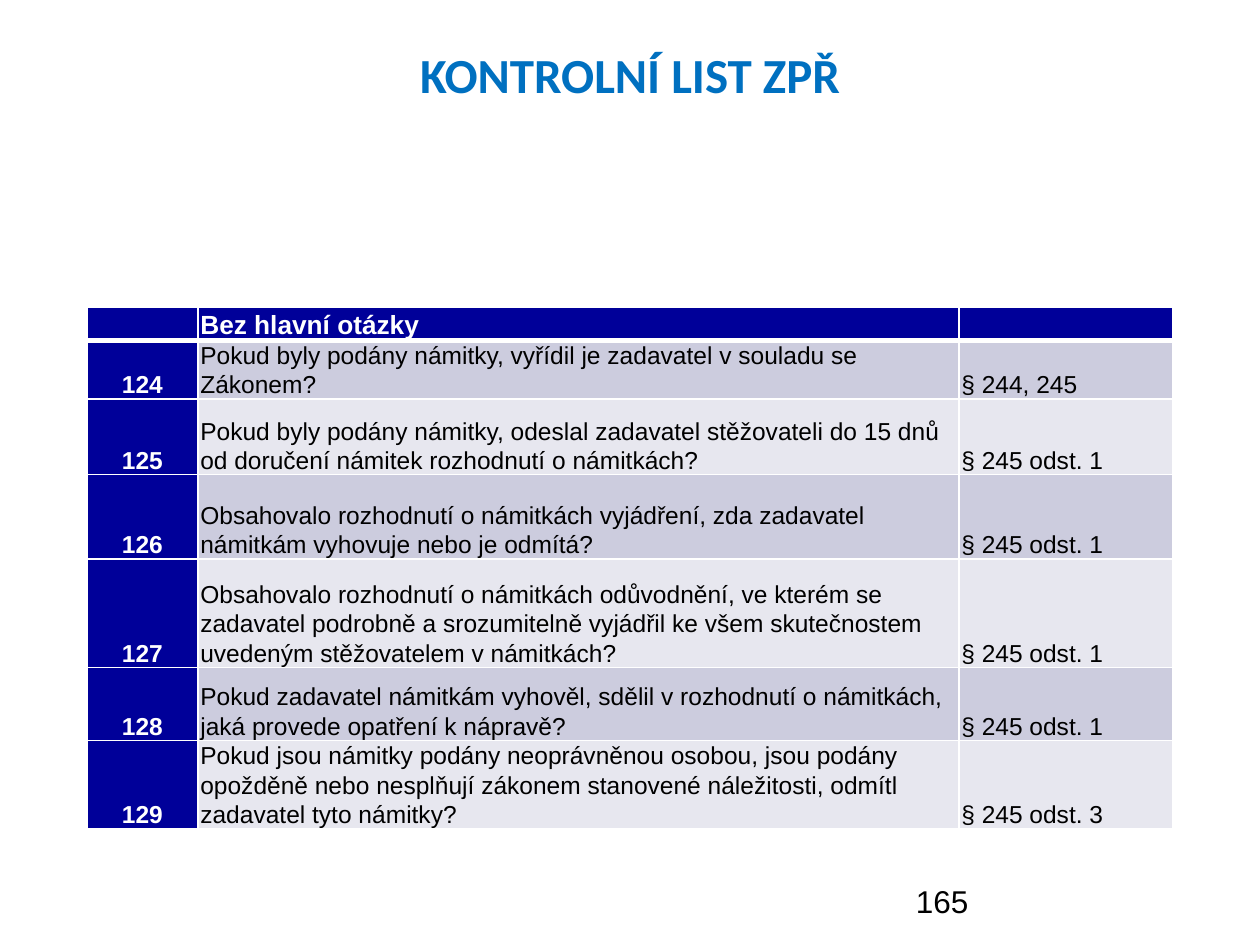
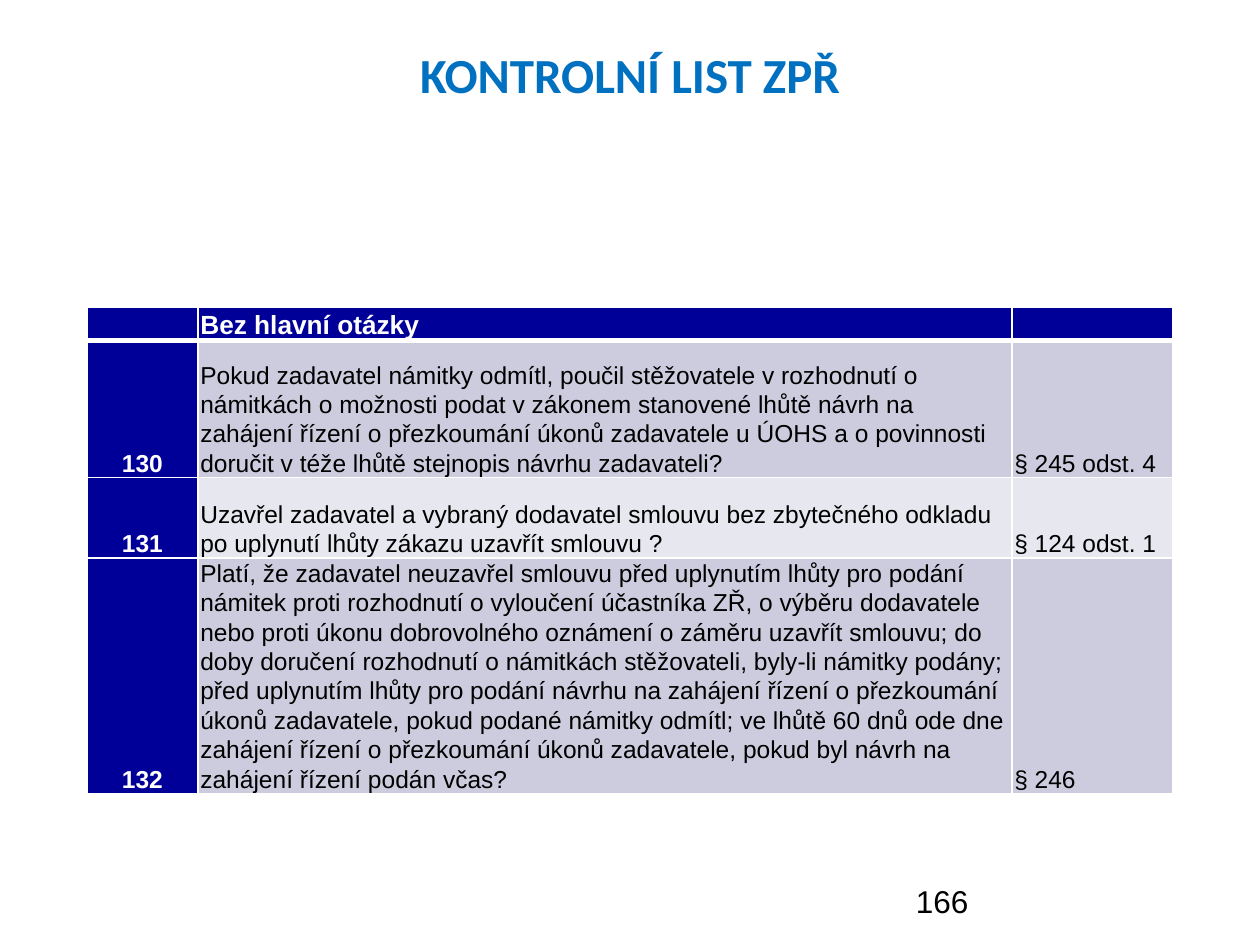
from dataclasses import dataclass

from lxml import etree
from pptx import Presentation
from pptx import util as u
from pptx.dml.color import RGBColor
from pptx.enum import text
from pptx.oxml import ns


@dataclass(frozen=True)
class Theme:
    title_color: str = "0070C0"
    header_fill: str = "000099"
    bands: tuple = ("CCCCDE", "E7E7EF")
    light: str = "FFFFFF"
    dark: str = "000000"
    title_font: str = "Calibri"
    body_font: str = "Arial"
    title_size: int = 28
    header_size: int = 15
    body_size: int = 14
    page_size: int = 18
    grid_width: int = 1
    header_rule: int = 3
    line_spacing: float = 1.07


THEME = Theme()
TITLE = "KONTROLNÍ LIST ZPŘ"
HEADING = ("", "Bez hlavní otázky", "")
HEADING_HEIGHT = 0.26
TITLE_BOX = (0.5, 0.3, 9, 1.25)
CHECKLIST_ORIGIN = (0.69, 2.44)
PAGE_BOX = (7.17, 6.95, 2.33, 0.4)

CHECKLISTS = [
    {
        "page": 165,
        "first_number": 124,
        "columns": (0.88, 6.04, 1.7),
        "questions": [
            (0.34, "Pokud byly podány námitky, vyřídil je zadavatel v souladu se Zákonem?",
             "§ 244, 245"),
            (0.6, "Pokud byly podány námitky, odeslal zadavatel stěžovateli do 15 dnů "
             "od doručení námitek rozhodnutí o námitkách?", "§ 245 odst. 1"),
            (0.67, "Obsahovalo rozhodnutí o námitkách vyjádření, zda zadavatel "
             "námitkám vyhovuje nebo je odmítá?", "§ 245 odst. 1"),
            (0.86, "Obsahovalo rozhodnutí o námitkách odůvodnění, ve kterém se zadavatel "
             "podrobně a srozumitelně vyjádřil ke všem skutečnostem uvedeným "
             "stěžovatelem v námitkách?", "§ 245 odst. 1"),
            (0.58, "Pokud zadavatel námitkám vyhověl, sdělil v rozhodnutí o námitkách, "
             "jaká provede opatření k nápravě?", "§ 245 odst. 1"),
            (0.58, "Pokud jsou námitky podány neoprávněnou osobou, jsou podány opožděně "
             "nebo nesplňují zákonem stanovené náležitosti, odmítl zadavatel tyto "
             "námitky?", "§ 245 odst. 3"),
        ],
    },
    {
        "page": 166,
        "first_number": 130,
        "columns": (0.88, 6.46, 1.28),
        "questions": [
            (1.09, "Pokud zadavatel námitky odmítl, poučil stěžovatele v rozhodnutí o "
             "námitkách o možnosti podat v zákonem stanovené lhůtě návrh na zahájení "
             "řízení o přezkoumání úkonů zadavatele u ÚOHS a o povinnosti doručit v "
             "téže lhůtě stejnopis návrhu zadavateli?", "§ 245 odst. 4"),
            (0.64, "Uzavřel zadavatel a vybraný dodavatel smlouvu bez zbytečného odkladu "
             "po uplynutí lhůty zákazu uzavřít smlouvu ?", "§ 124 odst. 1"),
            (1.79, "Platí, že zadavatel neuzavřel smlouvu před uplynutím lhůty pro podání "
             "námitek proti rozhodnutí o vyloučení účastníka ZŘ, o výběru dodavatele "
             "nebo proti úkonu dobrovolného oznámení o záměru uzavřít smlouvu; do doby "
             "doručení rozhodnutí o námitkách stěžovateli, byly-li námitky podány; před "
             "uplynutím lhůty pro podání návrhu na zahájení řízení o přezkoumání úkonů "
             "zadavatele, pokud podané námitky odmítl; ve lhůtě 60 dnů ode dne zahájení "
             "řízení o přezkoumání úkonů zadavatele, pokud byl návrh na zahájení řízení "
             "podán včas?", "§ 246"),
        ],
    },
]


def inches(values):
    return [u.Inches(value) for value in values]


def style_runs(paragraph, font, size, color, bold=False):
    for run in paragraph.runs:
        run.font.name = font
        run.font.size = u.Pt(size)
        run.font.bold = bold
        run.font.color.rgb = RGBColor.from_string(color)


def set_borders(cell, top, bottom):
    properties = cell._tc.get_or_add_tcPr()
    widths = {"L": THEME.grid_width, "R": THEME.grid_width, "T": top, "B": bottom}
    for side, width in widths.items():
        border = etree.SubElement(properties, ns.qn(f"a:ln{side}"), w=str(u.Pt(width)))
        fill = etree.SubElement(border, ns.qn("a:solidFill"))
        etree.SubElement(fill, ns.qn("a:srgbClr"), val=THEME.light)


def fill_cell(cell, wording, row, column):
    heading = row == 0
    emphasised = heading or column == 0
    size = THEME.header_size if heading else THEME.body_size
    set_borders(cell,
                top=THEME.header_rule if row == 1 else THEME.grid_width,
                bottom=THEME.header_rule if heading else THEME.grid_width)
    cell.fill.solid()
    cell.fill.fore_color.rgb = RGBColor.from_string(
        THEME.header_fill if emphasised else THEME.bands[(row - 1) % 2])
    cell.margin_left = cell.margin_right = u.Inches(0.02)
    cell.margin_top = cell.margin_bottom = 0
    cell.vertical_anchor = text.MSO_ANCHOR.BOTTOM
    paragraph = cell.text_frame.paragraphs[0]
    paragraph.line_spacing = THEME.line_spacing
    if wording:
        paragraph.text = wording
        paragraph.alignment = (
            text.PP_ALIGN.CENTER if column == 0 else text.PP_ALIGN.LEFT)
        style_runs(paragraph, THEME.body_font, size,
                   THEME.light if emphasised else THEME.dark, emphasised)
    else:
        etree.SubElement(paragraph._p, ns.qn("a:endParaRPr"), sz=str(size * 100))


def place_title(slide, box):
    title = slide.shapes.title
    title.left, title.top, title.width, title.height = inches(box)
    frame = title.text_frame
    frame.text = TITLE
    frame.vertical_anchor = text.MSO_ANCHOR.TOP
    paragraph = frame.paragraphs[0]
    paragraph.alignment = text.PP_ALIGN.CENTER
    style_runs(paragraph, THEME.title_font, THEME.title_size, THEME.title_color, True)


def place_checklist(slide, origin, checklist):
    questions, columns = checklist["questions"], checklist["columns"]
    heights = [HEADING_HEIGHT] + [height for height, _, _ in questions]
    entries = [HEADING] + [
        (str(number), question, section)
        for number, (_, question, section)
        in enumerate(questions, checklist["first_number"])]
    grid = slide.shapes.add_table(
        len(entries), len(columns),
        *inches((*origin, sum(columns), sum(heights)))).table
    for column, width in zip(grid.columns, columns):
        column.width = u.Inches(width)
    for row, (height, entry) in enumerate(zip(heights, entries)):
        grid.rows[row].height = u.Inches(height)
        for column, wording in enumerate(entry):
            fill_cell(grid.cell(row, column), wording, row, column)


def place_page_number(slide, box, page):
    frame = slide.shapes.add_textbox(*inches(box)).text_frame
    frame.word_wrap = True
    frame.text = str(page)
    style_runs(frame.paragraphs[0], THEME.body_font, THEME.page_size, THEME.dark)


def add_checklist_slide(deck, checklist):
    slide = deck.slides.add_slide(deck.slide_layouts[5])
    place_title(slide, TITLE_BOX)
    place_checklist(slide, CHECKLIST_ORIGIN, checklist)
    place_page_number(slide, PAGE_BOX, checklist["page"])


def main():
    deck = Presentation()
    deck.slide_width, deck.slide_height = inches((10, 7.5))
    for checklist in CHECKLISTS:
        add_checklist_slide(deck, checklist)
    deck.save("out.pptx")


if __name__ == "__main__":
    main()
